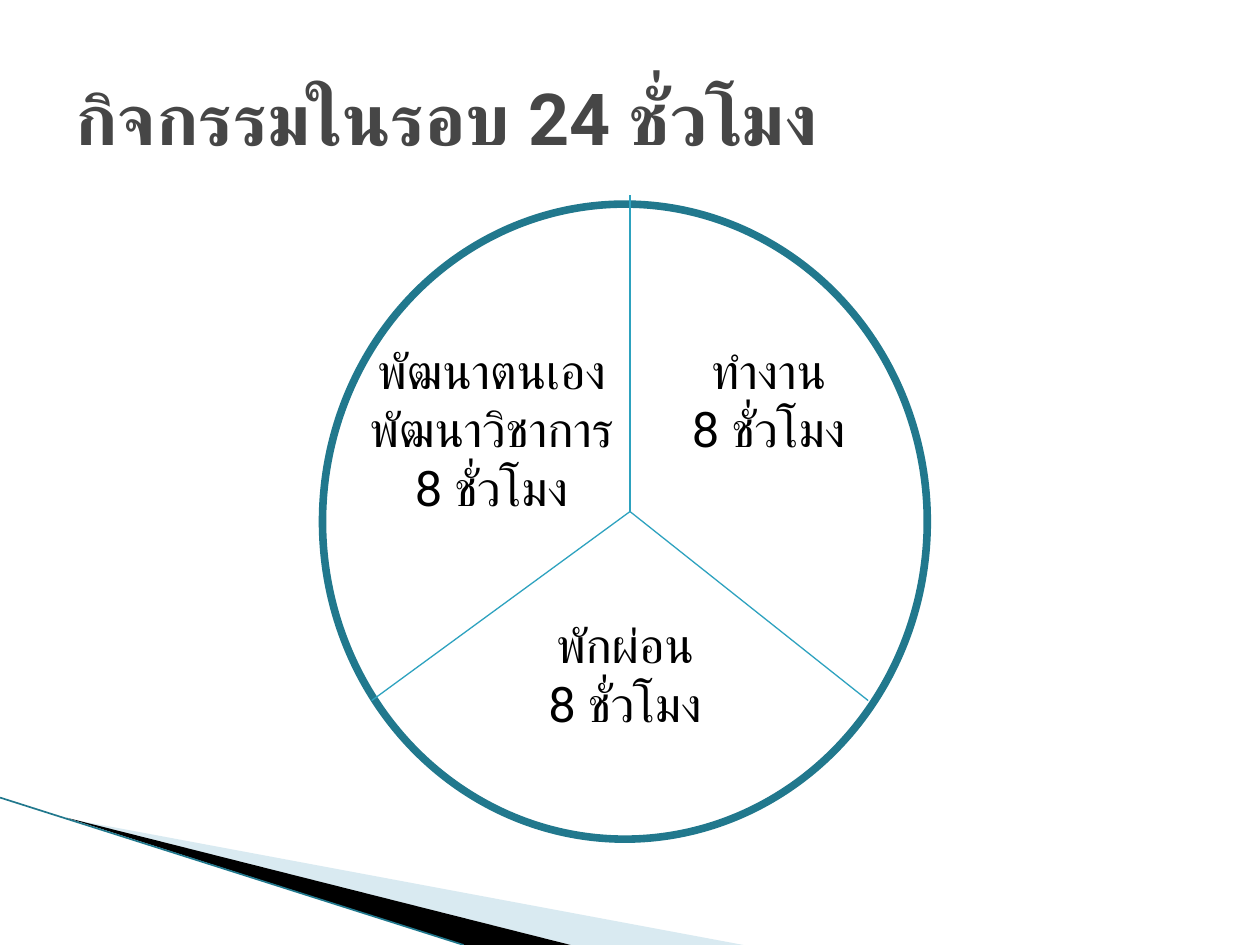
from lxml.etree import SubElement
from pptx import Presentation
from pptx.dml.color import RGBColor
from pptx.enum.shapes import MSO_CONNECTOR, MSO_SHAPE
from pptx.enum.text import MSO_ANCHOR, PP_ALIGN
from pptx.oxml.ns import qn
from pptx.util import Inches, Pt

# Content
TITLE = "กิจกรรมในรอบ 24 ชั่วโมง"
HOURS = "8 ชั่วโมง"
# activity, then left, top, width, height of its label
ACTIVITIES = [
    ("พัฒนาตนเอง พัฒนาวิชาการ", (2.8, 2.65, 2.2, 1.51)),
    ("ทำงาน", (5, 2.65, 2.2, 1.04)),
    ("พักผ่อน", (3.86, 4.83, 2.2, 1.04)),
]
TITLE_AREA = (0.5, 0.3, 9, 1.25)
DAY_CIRCLE = (2.56, 1.62, 4.8, 5.04)
HUB = (5, 4.06)
SPOKE_ENDS = [(5, 1.55), (2.95, 5.56), (6.89, 5.56)]

THEME = {
    "font": "Roboto", "title_size": 41, "label_size": 28,
    "title": "464646", "label": "000000",
    "ring": "21788D", "spoke": "2DA2BF",
    "pale": "D9EAF1", "dark": "000000",
}
# Corner wedges: outline and colour
WEDGES = [
    ([(0.55, 6.5), (5.9, 7.5), (4.53, 7.5)], THEME["pale"]),
    ([(0.53, 6.49), (4.53, 7.5), (3.68, 7.5)], THEME["dark"]),
]
CORNER_EDGE = ((0, 6.33), (3.68, 7.5))


def add_line(page, start, end, color, width):
    line = page.shapes.add_connector(
        MSO_CONNECTOR.STRAIGHT, *map(Inches, (*start, *end)))
    line.line.color.rgb = RGBColor.from_string(color)
    line.line.width = Pt(width)
    SubElement(line._element.spPr, qn("a:effectLst"))


def add_wedge(page, points, color):
    corners = [(Inches(x), Inches(y)) for x, y in points]
    builder = page.shapes.build_freeform(*corners[0])
    builder.add_line_segments(corners[1:], close=True)
    wedge = builder.convert_to_shape()
    wedge.shadow.inherit = False
    wedge.fill.solid()
    wedge.fill.fore_color.rgb = RGBColor.from_string(color)
    wedge.line.fill.background()


def add_text(page, area, lines, role, align, bold=False):
    box = page.shapes.add_textbox(*map(Inches, area))
    frame = box.text_frame
    frame.word_wrap = True
    frame.text = "\n".join(lines)
    for para in frame.paragraphs:
        para.alignment = align
        for span in para.runs:
            span.font.name = THEME["font"]
            span.font.size = Pt(THEME[role + "_size"])
            span.font.bold = bold
            span.font.color.rgb = RGBColor.from_string(THEME[role])
            # Thai letters take the complex-script font
            SubElement(span.font._element, qn("a:cs"), typeface=THEME["font"])
    return frame


def main():
    deck = Presentation()
    deck.slide_width, deck.slide_height = Inches(10), Inches(7.5)
    page = deck.slides.add_slide(deck.slide_layouts[6])

    # Corner decoration
    for points, color in WEDGES:
        add_wedge(page, points, color)
    add_line(page, *CORNER_EDGE, THEME["ring"], 0.95)

    # Title
    title = add_text(page, TITLE_AREA, [TITLE], "title", PP_ALIGN.LEFT, bold=True)
    title.vertical_anchor = MSO_ANCHOR.MIDDLE

    # Day circle in three parts
    ring = page.shapes.add_shape(MSO_SHAPE.OVAL, *map(Inches, DAY_CIRCLE))
    ring.shadow.inherit = False
    ring.fill.background()
    ring.line.color.rgb = RGBColor.from_string(THEME["ring"])
    ring.line.width = Pt(4.33)
    for end in SPOKE_ENDS:
        add_line(page, HUB, end, THEME["spoke"], 0.75)

    # Activity labels
    for activity, area in ACTIVITIES:
        add_text(page, area, [activity, HOURS], "label", PP_ALIGN.CENTER)

    deck.save("out.pptx")


if __name__ == "__main__":
    main()
